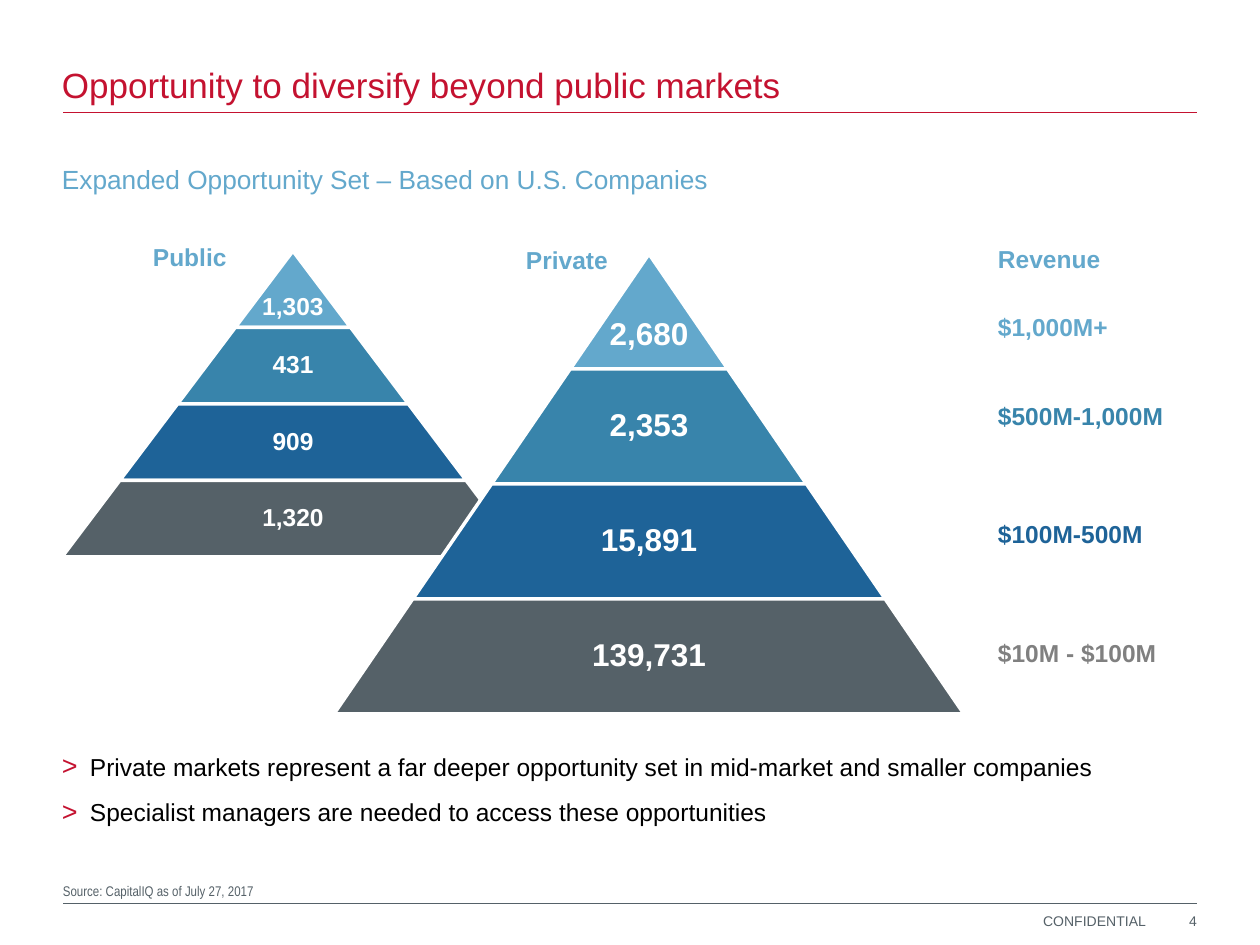
from dataclasses import dataclass

from lxml.etree import SubElement
from pptx import Presentation
from pptx.dml.color import RGBColor
from pptx.enum.shapes import MSO_CONNECTOR as Connector, MSO_SHAPE as Shape
from pptx.enum.text import MSO_ANCHOR as Anchor, PP_ALIGN as Align
from pptx.oxml.ns import qn
from pptx.util import Pt

EMU_PER_PX = 914400 / 126


@dataclass(frozen=True)
class Theme:
    red: str = "C41230"
    sky: str = "63A8CC"
    teal: str = "3884AB"
    blue: str = "1E6398"
    slate: str = "556168"
    gray: str = "808080"
    white: str = "FFFFFF"
    black: str = "000000"
    font: str = "Arial"
    narrow: str = "Arial Narrow"
    title: int = 20
    subtitle: int = 15
    large: int = 18
    body: int = 14
    small: int = 8


THEME = Theme()
TIER_COLORS = (THEME.sky, THEME.teal, THEME.blue, THEME.slate)


def px(length):
    return round(length * EMU_PER_PX)


def rgb(color):
    return RGBColor.from_string(color)


def style(paragraph, size, color, bold=False, font=THEME.font):
    for run in paragraph.runs:
        run.font.name = font
        run.font.size = Pt(size)
        run.font.bold = bold
        run.font.color.rgb = rgb(color)


def add_text(slide, box, lines, size, color, bold=False, font=THEME.font,
             align=Align.LEFT, anchor=Anchor.TOP, margins=(0, 0)):
    """Add a text box with one paragraph per line and return its frame."""
    frame = slide.shapes.add_textbox(*map(px, box)).text_frame
    frame.word_wrap = True
    frame.vertical_anchor = anchor
    frame.margin_left = frame.margin_right = px(margins[0])
    frame.margin_top = frame.margin_bottom = px(margins[1])
    frame.text = "\n".join(lines)
    for paragraph in frame.paragraphs:
        paragraph.alignment = align
        style(paragraph, size, color, bold, font)
    return frame


def add_rule(slide, y, color):
    rule = slide.shapes.add_connector(
        Connector.STRAIGHT, px(63), px(y), px(1197), px(y))
    rule.line.color.rgb = rgb(color)
    rule.line.width = Pt(0.5)
    SubElement(rule._element.spPr, qn("a:effectLst"))


def add_pyramid(slide, left, top, width, height, counts, size):
    """Stack equal-height tiers whose widths grow evenly from the apex."""
    tier_height = height / len(counts)
    step = width / len(counts)
    for level, (count, color) in enumerate(zip(counts, TIER_COLORS)):
        tier_width = step * (level + 1)
        box = (left + (width - tier_width) / 2, top + level * tier_height,
               tier_width, tier_height)
        tier = slide.shapes.add_shape(Shape.TRAPEZOID, *map(px, box))
        tier.adjustments[0] = step / 2 / tier_height
        tier.shadow.inherit = False
        tier.fill.solid()
        tier.fill.fore_color.rgb = rgb(color)
        tier.line.color.rgb = rgb(THEME.white)
        tier.line.width = Pt(2)

        label = add_text(slide, box, [count], size, THEME.white, bold=True,
                         align=Align.CENTER, anchor=Anchor.MIDDLE,
                         margins=(3, 3))
        label.paragraphs[0].line_spacing = 0.9
        if level == 0:  # the apex is narrow, so its count sits lower
            label.margin_top = px(1.6 * size * 1.75)


def add_revenue(slide):
    bands = (("Revenue", THEME.sky, 0), ("$1,000M+", THEME.sky, 22),
             ("$500M-1,000M", THEME.teal, 34), ("$100M-500M", THEME.blue, 51),
             ("$10M - $100M", THEME.gray, 51))
    frame = add_text(slide, (985, 238, 210, 475), [band[0] for band in bands],
                     THEME.body, THEME.sky, bold=True, margins=(13, 6))
    for paragraph, (_, color, gap) in zip(frame.paragraphs, bands):
        paragraph.space_before = Pt(gap)
        style(paragraph, THEME.body, color, bold=True)


def add_bullets(slide, box, lines):
    frame = add_text(slide, box, lines, THEME.body, THEME.black,
                     margins=(0, 6))
    for number, paragraph in enumerate(frame.paragraphs):
        paragraph.space_before = Pt(9 if number else 0)
        props = paragraph._p.get_or_add_pPr()
        props.set("marL", str(px(28)))
        props.set("indent", str(px(-28)))
        bullet_color = SubElement(props, qn("a:buClr"))
        SubElement(bullet_color, qn("a:srgbClr"), val=THEME.red)
        SubElement(props, qn("a:buSzPct"), val="110000")
        SubElement(props, qn("a:buFont"), typeface=THEME.font)
        SubElement(props, qn("a:buChar"), char=">")


def main():
    deck = Presentation()
    deck.slide_width, deck.slide_height = px(1260), px(945)
    slide = deck.slides.add_slide(deck.slide_layouts[6])

    # Heading
    title = add_text(slide, (62, 15, 893, 98),
                     ["Opportunity to diversify beyond public markets"],
                     THEME.title, THEME.red, anchor=Anchor.BOTTOM,
                     margins=(0, 6))
    title.paragraphs[0].line_spacing = 0.95
    add_rule(slide, 112, THEME.red)
    add_text(slide, (62, 163, 1134, 38),
             ["Expanded Opportunity Set – Based on U.S. Companies"],
             THEME.subtitle, THEME.sky)

    # Company counts by revenue band
    add_pyramid(slide, 62, 251, 462, 306,
                ("1,303", "431", "909", "1,320"), THEME.body)
    add_pyramid(slide, 334, 254, 630, 460,
                ("2,680", "2,353", "15,891", "139,731"), THEME.large)
    for name, left, top in (("Public", 140, 236), ("Private", 513, 239)):
        add_text(slide, (left, top, 116, 43), [name], THEME.body, THEME.sky,
                 bold=True, margins=(13, 6))
    add_revenue(slide)

    # Takeaways
    add_bullets(slide, (62, 746, 1135, 107), (
        "Private markets represent a far deeper opportunity set in "
        "mid-market and smaller companies",
        "Specialist managers are needed to access these opportunities"))

    # Footer
    add_text(slide, (63, 818, 1133, 81),
             ["Source: CapitalIQ as of July 27, 2017"], THEME.small,
             THEME.slate, font=THEME.narrow, anchor=Anchor.BOTTOM)
    add_rule(slide, 903, THEME.slate)
    add_text(slide, (1043, 912, 120, 17), ["CONFIDENTIAL"], THEME.small,
             THEME.slate)
    add_text(slide, (1167, 909, 30, 23), ["4"], THEME.small, THEME.slate,
             align=Align.RIGHT, anchor=Anchor.MIDDLE)

    deck.save("out.pptx")


if __name__ == "__main__":
    main()
